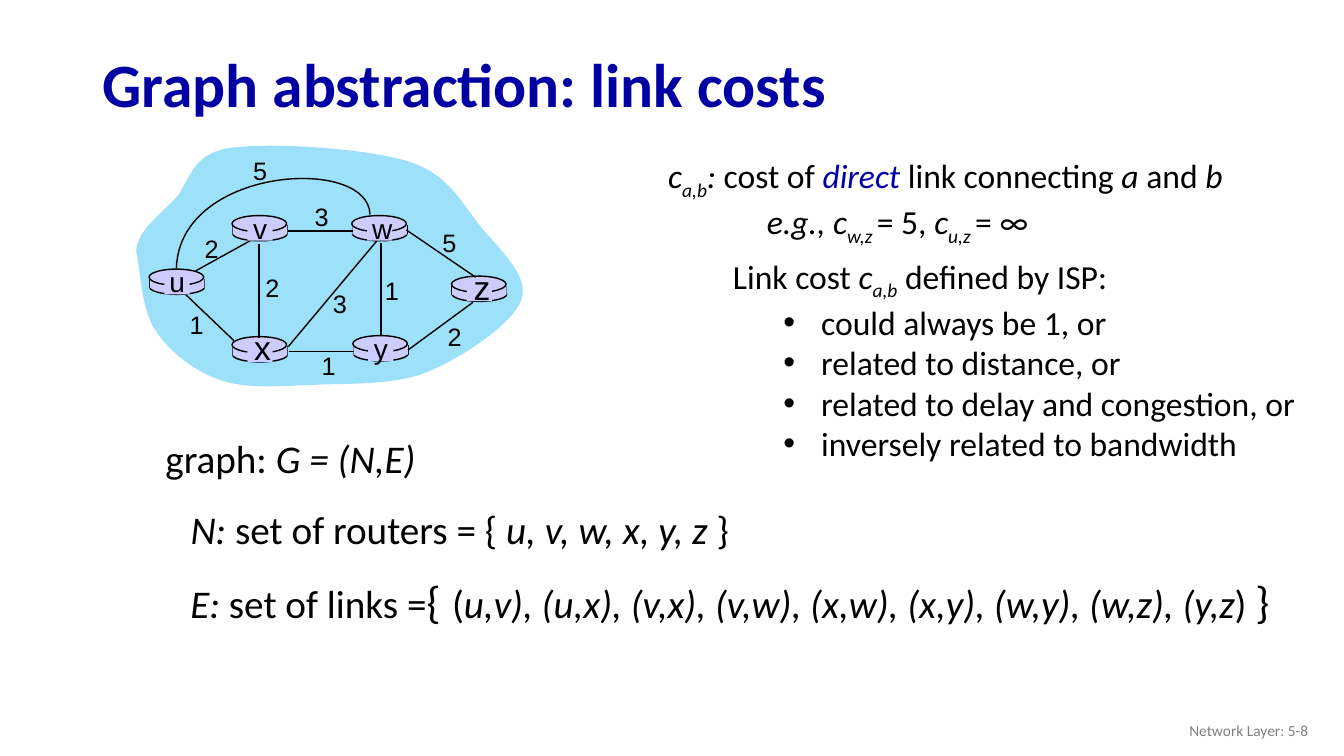
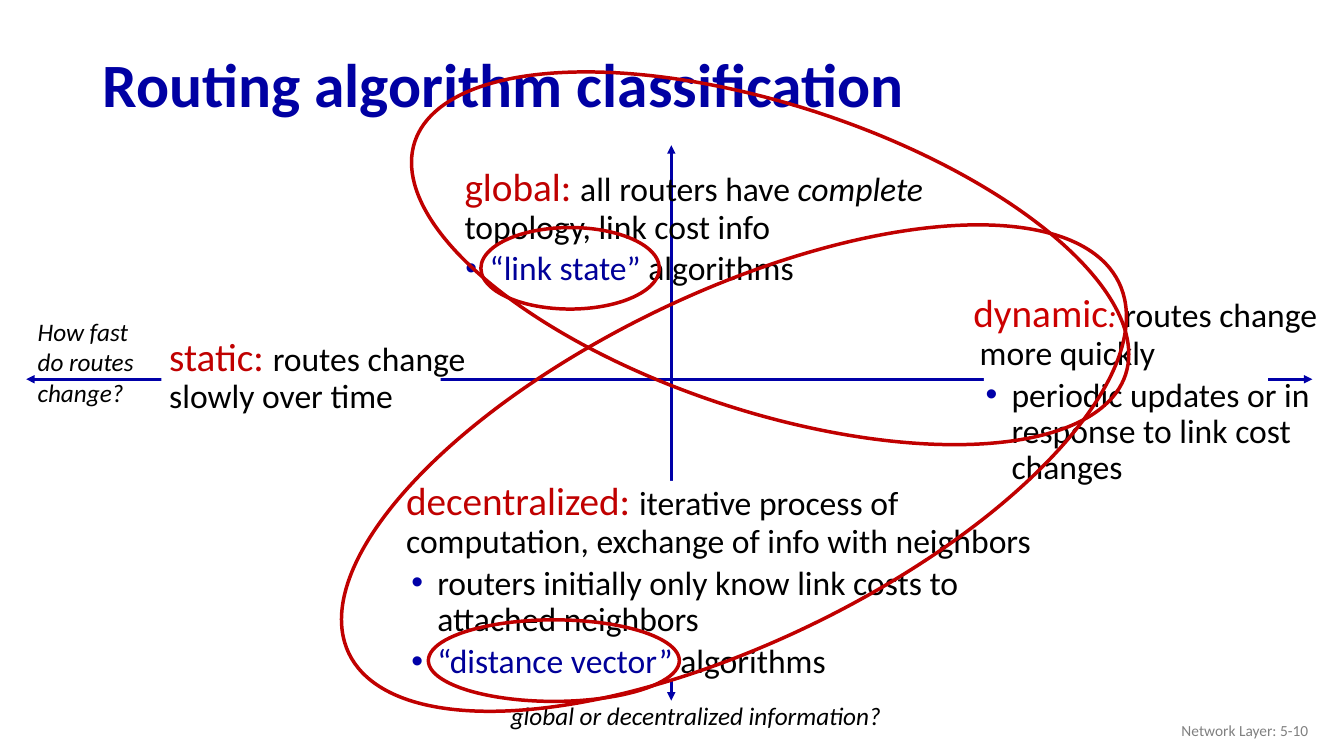
"""Build two network-layer slides: link costs on a graph, and routing algorithm classes."""
from dataclasses import dataclass

import pptx
import pptx.dml.color
import pptx.enum.shapes
import pptx.enum.text
import pptx.oxml
import pptx.oxml.ns
import pptx.util

Pt = pptx.util.Pt
SHAPES = pptx.enum.shapes.MSO_SHAPE
ALIGN = pptx.enum.text.PP_ALIGN
ANCHOR = pptx.enum.text.MSO_ANCHOR

BLACK, WHITE, GRAY = "000000", "FFFFFF", "808080"
TITLE_BLUE, AXIS_BLUE, TERM_BLUE = "0000A3", "0000A8", "000099"
RED, BRIGHT_RED = "C00000", "CC0000"
CLOUD_BLUE, ROUTER_LILAC = "9CE0FA", "CCCCFF"

ROUTERS = {
    "u": (106.5, 192.25, 20), "v": (165.75, 154, 20), "w": (251.25, 154, 20),
    "x": (165.75, 240.5, 24), "y": (252, 239.75, 20), "z": (322.5, 197.25, 24),
}
LINKS = [
    (139.75, 193.5, 182.25, 170), (272.25, 173.5, 272.25, 239), (185.1, 174.25, 185.1, 241.25),
    (206, 247.5, 269.25, 172), (291.5, 250, 337.75, 216), (206.5, 251.25, 252.75, 251.25),
    (167, 243.25, 132.5, 210.25), (206, 164.9, 252, 164.9), (290.25, 164.25, 339.75, 198),
]
COSTS = [
    ("2", 151.25, 177.75), ("2", 194.5, 205.25), ("1", 140.5, 231.75), ("3", 242.75, 216.75),
    ("1", 234.75, 261.25), ("1", 280, 207.25), ("2", 324.75, 240.5), ("5", 321, 173.5),
    ("3", 229.75, 154.75), ("5", 185.75, 121.5),
]
CLOUD = [
    (97.25, 179.25), (98, 165), (113.75, 154), (125.25, 141.75), (136, 129.5), (136, 110.25),
    (163.5, 105.75), (191.5, 101.5), (261.25, 105.75), (291.5, 115.25), (321, 124.5),
    (329.75, 145.5), (343.5, 162), (357, 178.5), (378.75, 197.25), (372.25, 214.5),
    (365.75, 231.75), (329.75, 255.5), (305.25, 265.75), (280, 275.75), (246.25, 273.5),
    (221.75, 275), (196.5, 275.75), (174.25, 278), (155.5, 270.75), (137.5, 264.25),
    (120.25, 250.5), (110.25, 234.75), (100.75, 219.5), (100, 190.75), (97.25, 179.25),
]
ARC_LINK = [(264.25, 153.25), (263.5, 111), (128.25, 118.75), (126, 191.5)]


@dataclass
class Span:
    """A stretch of text in one style."""
    text: str
    size: float = 24
    color: str = BLACK
    italic: bool = False
    bold: bool = False
    sub: bool = False
    font: str = "Calibri"


@dataclass
class Para:
    """A paragraph of spans with its indents, bullet and spacing."""
    spans: list
    left: float = 0
    first: float = 0
    bullet: str = ""
    before: float = 0
    spacing: float = 1.0
    align: object = ALIGN.LEFT


def rgb(value):
    """Return a colour from a hex string."""
    return pptx.dml.color.RGBColor.from_string(value)


def italic(text, **style):
    """Return an italic span."""
    return Span(text, italic=True, **style)


def cost_symbol(nodes):
    """Return the spans of the symbol c with its node pair as subscript."""
    return [italic("c"), italic(nodes, sub=True)]


def add_element(parent, tag, **attributes):
    """Append a DrawingML element to a parent."""
    child = pptx.oxml.parse_xml(f"<a:{tag} {pptx.oxml.ns.nsdecls('a')}/>")
    for name, value in attributes.items():
        child.set(name, str(value))
    parent.append(child)
    return child


def fill_paragraph(paragraph, para):
    """Write a Para into an empty paragraph."""
    paragraph.alignment = para.align
    paragraph.space_before = Pt(para.before)
    paragraph.line_spacing = para.spacing
    properties = paragraph._p.get_or_add_pPr()
    properties.set("marL", str(Pt(para.left)))
    properties.set("indent", str(Pt(para.first)))
    if para.bullet:
        add_element(add_element(properties, "buClr"), "srgbClr", val=para.bullet)
        add_element(properties, "buFont", typeface="Arial")
        add_element(properties, "buChar", char="•")
    for span in para.spans:
        run = paragraph.add_run()
        run.text = span.text
        font = run.font
        font.name, font.size = span.font, Pt(span.size)
        font.bold, font.italic = span.bold, span.italic
        font.color.rgb = rgb(span.color)
        if span.sub:
            run._r.get_or_add_rPr().set("baseline", "-25000")


def add_text(slide, left, top, width, height, *paras, anchor=ANCHOR.TOP, wrap=True):
    """Add a text box holding the given paragraphs."""
    box = slide.shapes.add_textbox(Pt(left), Pt(top), Pt(width), Pt(height))
    frame = box.text_frame
    frame.word_wrap = wrap
    frame.vertical_anchor = anchor
    for index, para in enumerate(paras):
        fill_paragraph(frame.add_paragraph() if index else frame.paragraphs[0], para)


def add_label(slide, text, center_x, center_y, size):
    """Add a short centred label around a point."""
    width, height = 25, 1.2 * size + 7.2
    para = Para([Span(text, size, font="Arial")], align=ALIGN.CENTER)
    add_text(slide, center_x - width / 2, center_y - height / 2, width, height, para,
             anchor=ANCHOR.MIDDLE, wrap=False)


def paint(shape, fill=None, line=None, weight=1):
    """Set the fill and outline of a shape and drop its shadow."""
    shape.shadow.inherit = False
    if fill:
        shape.fill.solid()
        shape.fill.fore_color.rgb = rgb(fill)
    else:
        shape.fill.background()
    if line:
        shape.line.color.rgb = rgb(line)
        shape.line.width = Pt(weight)
    else:
        shape.line.fill.background()


def add_figure(slide, kind, left, top, width, height, rotation=0, **style):
    """Add a painted preset shape."""
    shape = slide.shapes.add_shape(kind, Pt(left), Pt(top), Pt(width), Pt(height))
    shape.rotation = rotation
    paint(shape, **style)


def add_line(slide, x1, y1, x2, y2, color=BLACK, weight=1, arrows=False):
    """Add a straight line, with arrowheads at both ends on request."""
    line = slide.shapes.add_connector(
        pptx.enum.shapes.MSO_CONNECTOR.STRAIGHT, Pt(x1), Pt(y1), Pt(x2), Pt(y2))
    line.line.color.rgb = rgb(color)
    line.line.width = Pt(weight)
    properties = line.element.spPr
    if arrows:
        outline = properties.find(pptx.oxml.ns.qn("a:ln"))
        for end in ("headEnd", "tailEnd"):
            add_element(outline, end, type="triangle")
    add_element(properties, "effectLst")


def add_curve(slide, points, closed=False, **style):
    """Add a freeform whose points after the first form cubic Bézier segments."""
    start, *controls = [(Pt(x), Pt(y)) for x, y in points]
    builder = slide.shapes.build_freeform(*start)
    builder.add_line_segments(controls, close=closed)
    shape = builder.convert_to_shape()
    segments = list(shape.element.iter(pptx.oxml.ns.qn("a:lnTo")))
    for index in range(0, len(controls), 3):
        curve = pptx.oxml.parse_xml(f"<a:cubicBezTo {pptx.oxml.ns.nsdecls('a')}/>")
        segments[index].addprevious(curve)
        for segment in segments[index:index + 3]:
            curve.append(segment[0])
            segment.getparent().remove(segment)
    paint(shape, **style)


def add_router(slide, left, top):
    """Add a router drawn as a flat cylinder."""
    add_figure(slide, SHAPES.OVAL, left + 0.5, top + 8, 39, 10, fill=ROUTER_LILAC, line=BLACK)
    for side in (left + 0.5, left + 39.5):
        add_line(slide, side, top + 7, side, top + 13.5)
    add_figure(slide, SHAPES.RECTANGLE, left + 0.5, top + 7, 39, 6.5, fill=ROUTER_LILAC)
    add_figure(slide, SHAPES.OVAL, left, top, 39, 11.5, fill=ROUTER_LILAC, line=BLACK)


def add_slide(deck, title, title_width, number):
    """Add a blank slide with the shared title and footer."""
    slide = deck.slides.add_slide(deck.slide_layouts[6])
    heading = Para([Span(title, 44, TITLE_BLUE, bold=True)], spacing=0.9)
    add_text(slide, 66.25, 27.5, title_width, 70.5, heading, anchor=ANCHOR.MIDDLE)
    footer = Para([Span(f"Network Layer: 5-{number}", 11, GRAY)], align=ALIGN.RIGHT)
    add_text(slide, 725.75, 507.5, 216, 29, footer, anchor=ANCHOR.MIDDLE)
    return slide


def draw_network(slide):
    """Draw the cloud with its routers, links and link costs."""
    add_curve(slide, CLOUD, closed=True, fill=CLOUD_BLUE)
    for left, top, _ in ROUTERS.values():
        add_router(slide, left, top)
    for ends in LINKS:
        add_line(slide, *ends)
    add_curve(slide, ARC_LINK, line=BLACK)
    for name, (left, top, size) in ROUTERS.items():
        shift = 0.3 * (size - 20)
        add_figure(slide, SHAPES.RECTANGLE, left + 11, top + 1.5, 18, 16.5, fill=ROUTER_LILAC)
        add_label(slide, name, left + 20 + shift, top + 8.75 - shift, size)
    for cost, center_x, center_y in COSTS:
        add_label(slide, cost, center_x, center_y, 18)


def build_link_costs(deck):
    """Build the slide on graph abstraction."""
    slide = add_slide(deck, "Graph abstraction: link costs", 540, 8)
    draw_network(slide)
    add_text(slide, 111, 306.75, 195, 75,
             Para([Span("graph: ", 28), italic("G = (N,E)", size=28)]))
    add_text(slide, 470.25, 107.25, 463.75, 65.5,
             Para([*cost_symbol("a,b"), italic(": "), Span("cost of "),
                   italic("direct", color=AXIS_BLUE), Span(" link connecting "),
                   italic("a"), Span(" and "), italic("b")]),
             Para([italic("e.g., "), *cost_symbol("w,z "), Span("= 5, "),
                   *cost_symbol("u,z "), Span("= ∞")], left=70.5))
    add_text(slide, 129, 357.5, 402.5, 41,
             Para([italic("N: ", size=28), Span("set of routers = { ", 28),
                   italic("u, v, w, x, y, z ", size=28), Span("}", 28)]))
    pairs = "u,v), (u,x), (v,x), (v,w), (x,w), (x,y), (w,y), (w,z), (y,z"
    add_text(slide, 129, 402, 795, 51,
             Para([italic("E: ", size=28), Span("set of links =", 28), Span("{", 32),
                   Span(" ", 36), Span("(", 28), italic(pairs, size=28),
                   Span(") ", 28), Span("}", 32)]))
    choices = ["could always be 1, or", "related to distance, or",
               "related to delay and congestion, or", "inversely related to bandwidth"]
    add_text(slide, 489.5, 179.25, 463.75, 152.5,
             Para([Span("Link cost "), *cost_symbol("a,b"), Span(" defined by ISP:")], left=27),
             *[Para([Span(choice)], left=90, first=-27, bullet=BLACK) for choice in choices])


def class_lead(term, *spans):
    """Return the opening paragraph of an algorithm class."""
    return Para([Span(term, 28, RED), *spans], left=10, before=4, spacing=0.9)


def class_bullet(*spans, left=32.25, first=-18.5, bullet=AXIS_BLUE):
    """Return a bulleted paragraph of an algorithm class."""
    return Para(list(spans), left, first, bullet, before=4, spacing=0.9)


def build_classification(deck):
    """Build the slide on routing algorithm classes."""
    slide = add_slide(deck, "Routing algorithm classification", 655, 10)
    for axis in ((479.5, 103.75, 479.5, 500.5), (937.5, 270.9, 18.75, 270.9)):
        add_line(slide, *axis, color=AXIS_BLUE, weight=2, arrows=True)
    for patch in ((472.25, 343.5, 11.5, 141.75), (702.75, 260.75, 203, 16.5),
                  (115.25, 260.75, 199.5, 18), (800.75, 93.5, 13.75, 81.25)):
        add_figure(slide, SHAPES.RECTANGLE, *patch, fill=WHITE)
    add_text(slide, 357.75, 496.75, 282.25, 29,
             Para([italic("global or decentralized information?", size=18)]))
    add_text(slide, 19.75, 222.5, 98, 72.75,
             Para([italic("How fast do routes change?", size=18)]))
    add_text(slide, 314.75, 116.25, 355.75, 95,
             class_lead("global: ", Span("all routers have "), italic("complete"),
                        Span(" topology, link cost info")),
             class_bullet(Span("“link state” ", color=TERM_BLUE), Span("algorithms"),
                          left=28, first=-17.5, bullet=TITLE_BLUE))
    add_text(slide, 273, 340.75, 486.75, 193.75,
             class_lead("decentralized: ", Span("iterative process of computation, "
                                                "exchange of info with neighbors")),
             class_bullet(Span("routers initially only know link costs to attached neighbors")),
             class_bullet(Span("“distance vector” ", color=TERM_BLUE), Span("algorithms")))
    add_text(slide, 688.25, 206.5, 271.5, 187.25,
             Para([Span("dynamic", 28, BRIGHT_RED), italic(": ", color=BRIGHT_RED),
                   Span("routes change more quickly")],
                  left=4.5, first=-4.5, before=10, spacing=0.9),
             class_bullet(Span("periodic updates or in response to link cost changes"),
                          left=27.25))
    add_text(slide, 103.75, 237.5, 238.25, 95,
             class_lead("static: ", Span("routes change slowly over time")))
    for left, top, width, height, rotation in [
            (343.5, 162.5, 127.5, 58.25, 0), (306, 442.75, 179.25, 58.25, 0),
            (283, 75, 534.25, 219, 18.1), (219, 209.5, 610.5, 249.75, 334.3)]:
        add_figure(slide, SHAPES.OVAL, left, top, width, height, rotation,
                   line=RED, weight=2.5)


def main():
    """Build and save the deck."""
    deck = pptx.Presentation()
    deck.slide_width, deck.slide_height = Pt(960), Pt(540)
    build_link_costs(deck)
    build_classification(deck)
    deck.save("out.pptx")


if __name__ == "__main__":
    main()
